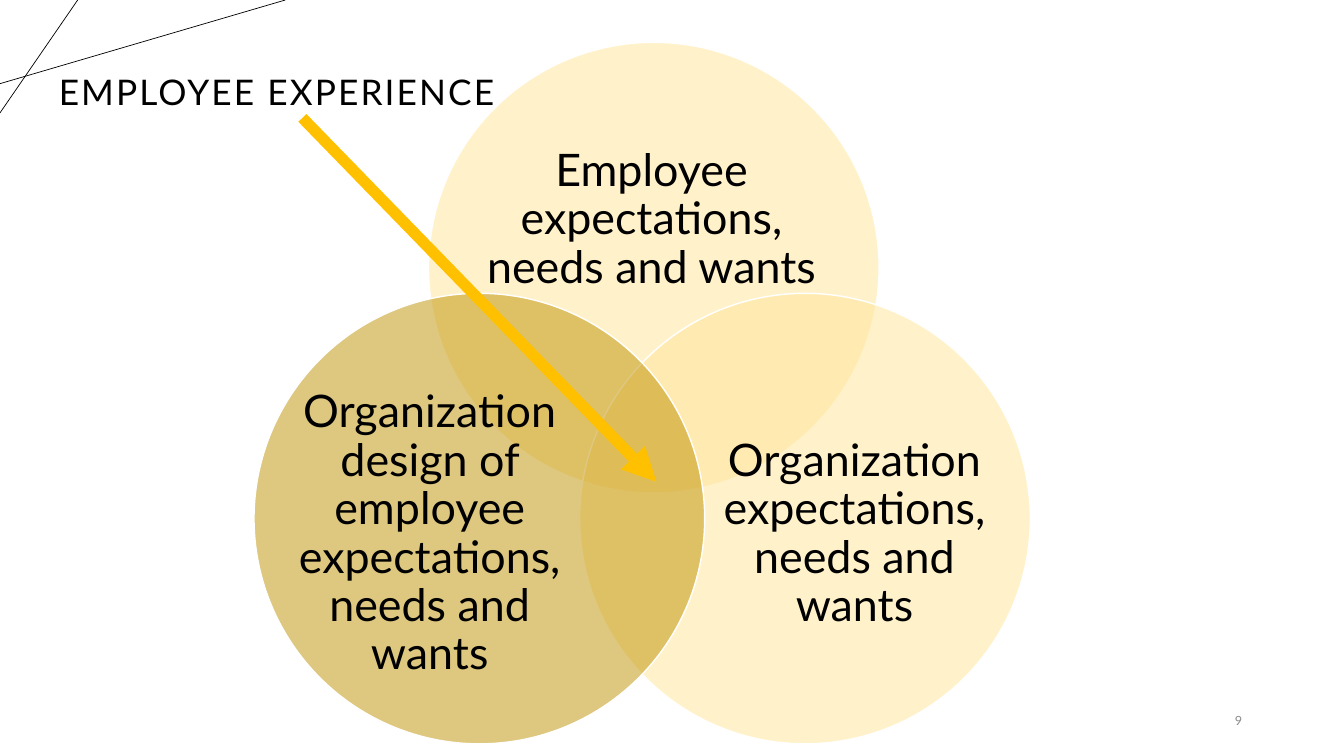
from lxml.etree import SubElement
from pptx import Presentation
from pptx.dml.color import RGBColor
from pptx.enum.shapes import MSO_CONNECTOR as CONNECTOR, MSO_SHAPE as SHAPE
from pptx.enum.text import MSO_ANCHOR as ANCHOR, MSO_AUTO_SIZE as AUTO, PP_ALIGN as ALIGN
from pptx.oxml.ns import qn
from pptx.util import Inches, Pt

BLACK = RGBColor(0x00, 0x00, 0x00)
WHITE = RGBColor(0xFF, 0xFF, 0xFF)
GRAY = RGBColor(0x8C, 0x8C, 0x8C)
CREAM = RGBColor(0xFF, 0xE6, 0x99)
OCHRE = RGBColor(0xBF, 0x90, 0x00)
AMBER = RGBColor(0xFF, 0xC0, 0x00)

DIAMETER = 33.53
LOWER_ROW = 38.8
CIRCLES = [
    ("Employee expectations, needs and wants",
     31.88, 5.6, CREAM, (0.13, 0.17, 0.73, 0.45)),
    ("Organization expectations, needs and wants",
     43.13, LOWER_ROW, CREAM, (0.31, 0.26, 0.6, 0.55)),
    ("Organization design of employee expectations, needs and wants",
     18.9, LOWER_ROW, OCHRE, (0.09, 0.26, 0.6, 0.55)),
]


class SlideBuilder:
    font = "Lato"

    def __init__(self, prs):
        self.col = prs.slide_width / 100
        self.row = prs.slide_height / 100
        self.s = prs.slides.add_slide(prs.slide_layouts[5])

    def x(self, share):
        return round(share * self.col)

    def y(self, share):
        return round(share * self.row)

    def set_text(self, sp, text, size, color, align, anchor, spacing=1.0):
        tf = sp.text_frame
        tf.text = text
        tf.word_wrap = True
        tf.auto_size = AUTO.NONE
        tf.vertical_anchor = anchor
        p = tf.paragraphs[0]
        p.alignment = align
        p.line_spacing = spacing
        r = p.runs[0]
        r.font.name = self.font
        r.font.size = Pt(size)
        r.font.color.rgb = color
        return r

    def title(self, text, x, y, w, h):
        sp = self.s.shapes.title
        sp.left, sp.top = self.x(x), self.y(y)
        sp.width, sp.height = self.x(w), self.y(h)
        r = self.set_text(sp, text, 25.2, BLACK, ALIGN.CENTER, ANCHOR.BOTTOM, 0.9)
        r.font._element.set("spc", "150")
        self.s.shapes._spTree.append(sp._element)

    def number(self, text, x, y, w, h):
        sp = self.s.shapes.add_textbox(self.x(x), self.y(y), self.x(w), self.y(h))
        self.set_text(sp, text, 9, GRAY, ALIGN.RIGHT, ANCHOR.MIDDLE)

    def circle(self, text, x, y, color, inner):
        left, top, d = self.x(x), self.y(y), self.x(DIAMETER)
        sp = self.s.shapes.add_shape(SHAPE.OVAL, left, top, d, d)
        sp.shadow.inherit = False
        sp.fill.solid()
        sp.fill.fore_color.rgb = color
        clr = sp._element.spPr.find(qn("a:solidFill"))[0]
        SubElement(clr, qn("a:alpha")).set("val", "50000")
        sp.line.color.rgb = WHITE
        sp.line.width = Pt(1)
        dx, dy, w, h = (round(share * d) for share in inner)
        label = self.s.shapes.add_textbox(left + dx, top + dy, w, h)
        tf = label.text_frame
        tf.margin_left = tf.margin_right = tf.margin_top = tf.margin_bottom = 0
        self.set_text(label, text, 32, BLACK, ALIGN.CENTER, ANCHOR.MIDDLE, 0.9)

    def line(self, x1, y1, x2, y2, color, width, arrow=False):
        c = self.s.shapes.add_connector(
            CONNECTOR.STRAIGHT, self.x(x1), self.y(y1), self.x(x2), self.y(y2))
        c.line.color.rgb = color
        c.line.width = Pt(width)
        if arrow:
            ln = c._element.spPr.find(qn("a:ln"))
            SubElement(ln, qn("a:tailEnd")).set("type", "triangle")
        SubElement(c._element.spPr, qn("a:effectLst"))


def main():
    prs = Presentation()
    prs.slide_width, prs.slide_height = Inches(13.33), Inches(7.5)
    b = SlideBuilder(prs)
    b.line(0, 11.07, 21.23, 0, BLACK, 0.5)
    b.line(5.78, 0, 0, 14.93, BLACK, 0.5)
    b.number("9", 85.07, 92.67, 8.1, 5.33)
    for circle in CIRCLES:
        b.circle(*circle)
    b.line(22.5, 15.6, 48.84, 63.73, AMBER, 8, arrow=True)
    b.title("EMPLOYEE EXPERIENCE", -0.75, 10.13, 42.69, 5.47)
    prs.save("out.pptx")


if __name__ == "__main__":
    main()
